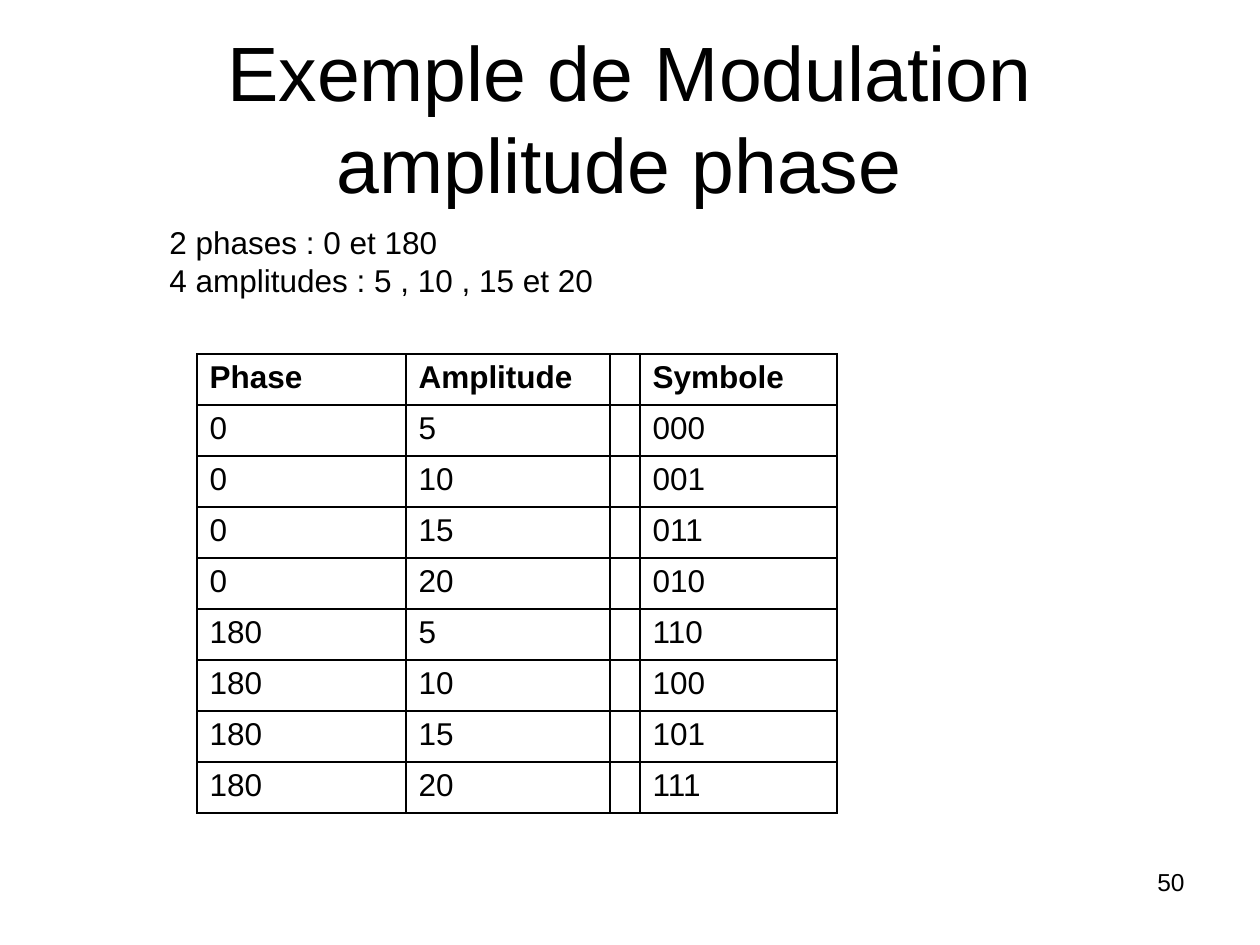
import pptx
import pptx.util
import pptx.dml.color
import pptx.enum.text
import lxml.etree
import itertools

PX = 914400 / 126
COLORS = {"ink": "000000", "paper": "FFFFFF"}
FONT = "Arial"
PP_ALIGN = pptx.enum.text.PP_ALIGN
ANCHOR = pptx.enum.text.MSO_ANCHOR


def px(n):
    return pptx.util.Emu(round(n * PX))


def style(p, size, bold=False):
    p.font.name = FONT
    p.font.size = pptx.util.Pt(size)
    p.font.bold = bold
    p.font.color.rgb = pptx.dml.color.RGBColor.from_string(COLORS["ink"])


prs = pptx.Presentation()
prs.slide_width, prs.slide_height = px(1260), px(945)
s = prs.slides.add_slide(prs.slide_layouts[6])

texts = [
    ((63, 38, 1134, 157), ["Exemple de Modulation amplitude phase "], 44, PP_ALIGN.CENTER, ANCHOR.MIDDLE, True),
    ((157, 217, 462, 89), ["2 phases : 0 et 180", "4 amplitudes : 5 , 10 , 15 et 20"], 18, PP_ALIGN.LEFT, ANCHOR.TOP, False),
    ((903, 861, 294, 66), ["50"], 14, PP_ALIGN.RIGHT, ANCHOR.TOP, True),
]
for box, lines, size, align, anchor, wrap in texts:
    tf = s.shapes.add_textbox(*map(px, box)).text_frame
    tf.word_wrap = wrap
    tf.vertical_anchor = anchor
    tf.text = "\n".join(lines)
    for p in tf.paragraphs:
        p.alignment = align
        style(p, size)

phases = ["0", "180"]
amplitudes = ["5", "10", "15", "20"]
symbols = ["000", "001", "011", "010", "110", "100", "101", "111"]
rows = [["Phase", "Amplitude", "", "Symbole"]]
for (phase, amplitude), symbol in zip(itertools.product(phases, amplitudes), symbols):
    rows.append([phase, amplitude, "", symbol])

widths = [209, 204, 30, 197]
row_height = 51
table = s.shapes.add_table(
    len(rows), len(widths), px(197), px(354), px(sum(widths)), px(row_height * len(rows))
).table
table.horz_banding = False
for column, width in zip(table.columns, widths):
    column.width = px(width)

ns = "http://schemas.openxmlformats.org/drawingml/2006/main"
for i, row in enumerate(rows):
    table.rows[i].height = px(row_height)
    for j, text in enumerate(row):
        cell = table.cell(i, j)
        cell.text = text
        style(cell.text_frame.paragraphs[0], 18, i == 0)
        cell.fill.solid()
        cell.fill.fore_color.rgb = pptx.dml.color.RGBColor.from_string(COLORS["paper"])
        tcPr = cell._tc.get_or_add_tcPr()
        for k, side in enumerate(["lnL", "lnR", "lnT", "lnB"]):
            ln = lxml.etree.Element(f"{{{ns}}}{side}", w=str(pptx.util.Pt(1)))
            fill = lxml.etree.SubElement(ln, f"{{{ns}}}solidFill")
            lxml.etree.SubElement(fill, f"{{{ns}}}srgbClr", val=COLORS["ink"])
            tcPr.insert(k, ln)

prs.save("out.pptx")
